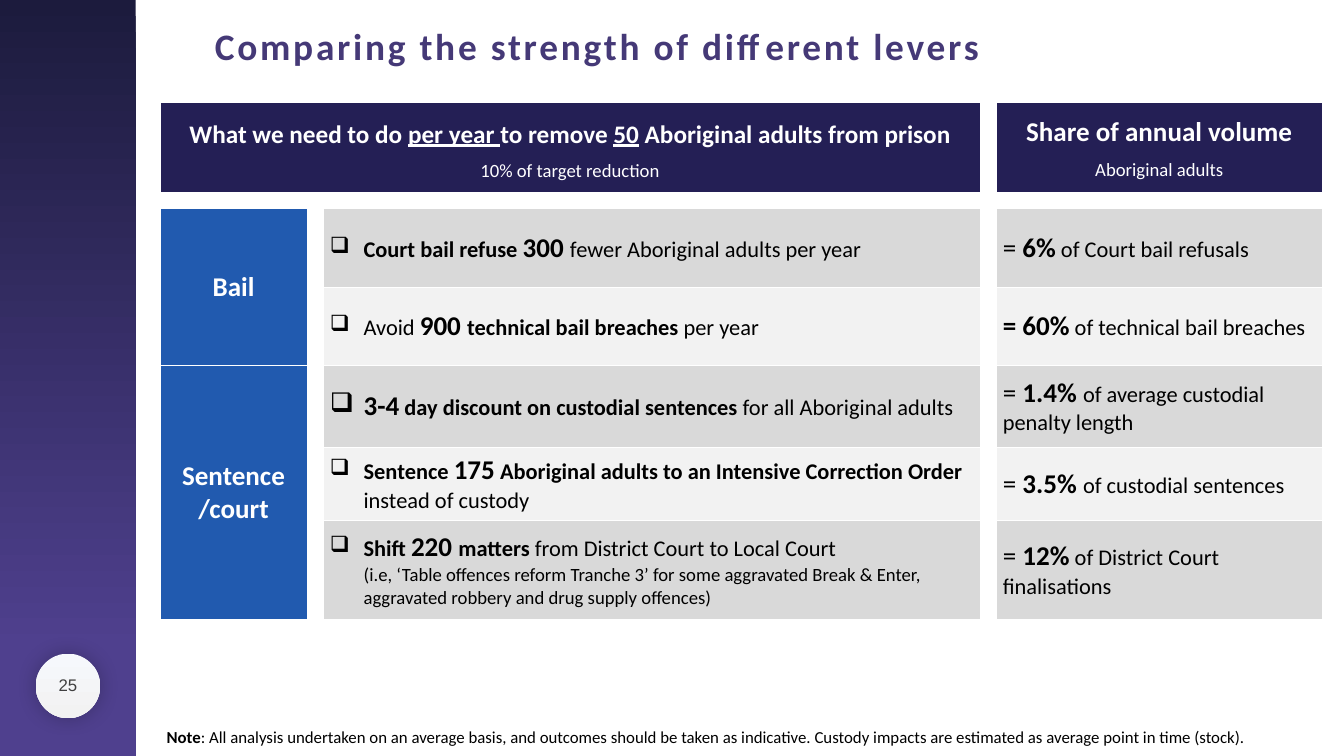
from lxml import etree
from pptx import Presentation
from pptx.dml.color import RGBColor
from pptx.enum.shapes import MSO_SHAPE
from pptx.enum.text import MSO_ANCHOR, PP_ALIGN
from pptx.oxml import parse_xml
from pptx.oxml.ns import nsdecls, qn
from pptx.util import Cm, Pt

RECT, OVAL = MSO_SHAPE.RECTANGLE, MSO_SHAPE.OVAL
TOP, MIDDLE = MSO_ANCHOR.TOP, MSO_ANCHOR.MIDDLE
LEFT, CENTER = PP_ALIGN.LEFT, PP_ALIGN.CENTER

WHITE, BLACK, NAVY, BLUE = "FFFFFF", "000000", "241F55", "215AAF"
BANDS = ["D9D9D9", "F2F2F2"]
BIG, MID, SMALL = 29, 24, 20
INDENT = Cm(1.27)

COLUMNS = [5.56, 0.61, 24.82, 0.61, 12.34]
ROWS = [3.45, 0.58, 2.97, 2.97, 3.07, 2.79, 3.73]
GROUP_COL, LEVER_COL, SHARE_COL = 0, 2, 4
FIRST_ROW = 2

# Each run is (text, size, bold) with an optional underline flag.
LEVER_HEADER = [
    [("What we need to do ", 27, True), ("per year ", 27, True, True), ("to remove ", 27, True),
     ("50", 27, True, True), (" Aboriginal adults from prison", 27, True)],
    [("10% of target reduction", SMALL, False)],
]
SHARE_HEADER = [
    [("Share of annual volume", BIG, True)],
    [("Aboriginal adults", SMALL, False)],
]
GROUPS = [(["Bail"], 2), (["Sentence", "/court"], 3)]
LEVERS = [
    [[("Court bail refuse ", MID, True), ("300 ", BIG, True),
      ("fewer Aboriginal adults per year", MID, False)]],
    [[("Avoid ", MID, False), ("900 ", BIG, True), ("technical bail breaches ", MID, True),
      ("per year", MID, False)]],
    [[("3-4", BIG, True), (" day discount on custodial sentences ", MID, True),
      ("for all Aboriginal adults", MID, False)]],
    [[("Sentence ", MID, True), ("175", BIG, True),
      (" Aboriginal adults to an Intensive Correction Order", MID, True),
      (" instead of custody", MID, False)]],
    [[("Shift ", MID, True), ("220 ", BIG, True), ("matters ", MID, True),
      ("from District Court to Local Court", MID, False)],
     [("(i.e, ‘Table offences reform Tranche 3’ for some aggravated Break & Enter, "
       "aggravated robbery and drug supply offences)", SMALL, False)]],
]
SHARES = [
    [("= ", BIG, False), ("6%", BIG, True), (" of Court bail refusals", MID, False)],
    [("= 60%", BIG, True), (" of technical bail breaches", MID, False)],
    [("= ", BIG, False), ("1.4% ", BIG, True), ("of average custodial penalty length", MID, False)],
    [("= ", BIG, False), ("3.5% ", BIG, True), ("of custodial sentences", MID, False)],
    [("= ", BIG, False), ("12%", BIG, True), (" of District Court finalisations", MID, False)],
]
NOTE = [
    ("Note", 18, True),
    (": All analysis undertaken on an average basis, and outcomes should be taken as indicative. "
     "Custody impacts are estimated as average point in time (stock).", 18, False),
]


def rgb(value):
    """Turn a hex string into a colour."""
    return RGBColor.from_string(value)


def write(tf, paragraphs, color, align=LEFT, font="Calibri"):
    """Write paragraphs of runs into a text frame."""
    tf.word_wrap = True
    for i, runs in enumerate(paragraphs):
        p = tf.paragraphs[0] if i == 0 else tf.add_paragraph()
        p.alignment = align
        for text, size, bold, *underline in runs:
            r = p.add_run()
            r.text = text
            r.font.name, r.font.size, r.font.bold = font, Pt(size), bold
            r.font.color.rgb = rgb(color)
            if underline:
                r.font.underline = True


def add_bullet(p, char):
    """Give a paragraph a hanging indent, with a bullet if there is one."""
    pPr = p._p.get_or_add_pPr()
    pPr.set("marL", str(INDENT))
    if char:
        pPr.set("indent", str(-INDENT))
        etree.SubElement(pPr, qn("a:buChar")).set("char", char)
    else:
        pPr.set("indent", "0")
        etree.SubElement(pPr, qn("a:buNone"))


def add_box(s, kind, left, top, width, height):
    """Add a plain shape without line or shadow."""
    sp = s.shapes.add_shape(kind, Cm(left), Cm(top), Cm(width), Cm(height))
    sp.shadow.inherit = False
    sp.line.fill.background()
    return sp


def fill_gradient(sp, *stops):
    """Fill a shape with a gradient from top to bottom."""
    sp.fill.gradient()
    sp.fill.gradient_angle = 270
    for stop, (position, color) in zip(sp.fill.gradient_stops, stops):
        stop.position = position
        stop.color.rgb = rgb(color)


def add_glow_shadow(sp):
    """Put a soft centred shadow behind a shape."""
    effects = sp._element.spPr.find(qn("a:effectLst"))
    effects.append(parse_xml(
        f'<a:outerShdw {nsdecls("a")} blurRad="{Pt(22)}" dist="0" algn="ctr" rotWithShape="0">'
        '<a:srgbClr val="000000"><a:alpha val="24000"/></a:srgbClr></a:outerShdw>'))


def style_cell(cell, bottom):
    """Give a cell white borders, a white fill and no minimum height."""
    tcPr = cell._tc.get_or_add_tcPr()
    for side, width in (("L", 1), ("R", 1), ("T", 1), ("B", bottom)):
        tcPr.append(parse_xml(
            f'<a:ln{side} {nsdecls("a")} w="{Pt(width)}"><a:solidFill>'
            f'<a:srgbClr val="{WHITE}"/></a:solidFill></a:ln{side}>'))
    cell.fill.solid()
    cell.fill.fore_color.rgb = rgb(WHITE)
    end = etree.SubElement(cell.text_frame.paragraphs[0]._p, qn("a:endParaRPr"))
    end.set("sz", "600")


def fill_cell(cell, paragraphs, fill, color, align=LEFT, anchor=MIDDLE):
    """Colour a cell and write its text."""
    cell.fill.fore_color.rgb = rgb(fill)
    cell.vertical_anchor = anchor
    write(cell.text_frame, paragraphs, color, align)


def add_header(cell, paragraphs, top, gap):
    """Fill a header cell with a heading and a smaller line."""
    fill_cell(cell, paragraphs, NAVY, WHITE, CENTER, TOP)
    cell.margin_top = Cm(top)
    cell.text_frame.paragraphs[1].space_before = Pt(gap)


def add_lever_table(s):
    """Add the table of levers and their share of volume."""
    table = s.shapes.add_table(len(ROWS), len(COLUMNS), Cm(6.05), Cm(3.86),
                               Cm(sum(COLUMNS)), Cm(sum(ROWS))).table
    table.first_row = table.horz_banding = False
    for column, width in zip(table.columns, COLUMNS):
        column.width = Cm(width)
    for i, (row, height) in enumerate(zip(table.rows, ROWS)):
        row.height = Cm(height)
        for cell in row.cells:
            style_cell(cell, 3 if i == 0 else 1)

    table.cell(0, GROUP_COL).merge(table.cell(0, LEVER_COL))
    add_header(table.cell(0, GROUP_COL), LEVER_HEADER, 0.64, 11)
    add_header(table.cell(0, SHARE_COL), SHARE_HEADER, 0.52, 11)

    for gap in (GROUP_COL + 1, LEVER_COL + 1):
        table.cell(FIRST_ROW, gap).merge(table.cell(len(ROWS) - 1, gap))
    top = FIRST_ROW
    for lines, span in GROUPS:
        cell = table.cell(top, GROUP_COL)
        cell.merge(table.cell(top + span - 1, GROUP_COL))
        fill_cell(cell, [[(line, BIG, True)] for line in lines], BLUE, WHITE, CENTER)
        top += span

    for i, (lever, share) in enumerate(zip(LEVERS, SHARES)):
        band = BANDS[i % 2]
        cell = table.cell(FIRST_ROW + i, LEVER_COL)
        fill_cell(cell, lever, band, BLACK)
        for j, p in enumerate(cell.text_frame.paragraphs):
            add_bullet(p, "" if j else "❑")
        fill_cell(table.cell(FIRST_ROW + i, SHARE_COL), [share], band, BLACK)


def add_title(s, text):
    """Place and format the slide title."""
    title = s.shapes.title
    title.left, title.top, title.width, title.height = Cm(6.05), Cm(0.74), Cm(33.07), Cm(1.96)
    tf = title.text_frame
    tf.vertical_anchor = TOP
    write(tf, [[(text, 40, True)]], "453977", CENTER)
    tf.paragraphs[0].runs[0].font._element.set("spc", "300")


def add_page_badge(s, number):
    """Add the round badge with the page number."""
    badge = add_box(s, OVAL, 1.35, 24.71, 2.44, 2.44)
    fill_gradient(badge, (0, "F6F8FC"), (1, "F2F2F2"))
    add_glow_shadow(badge)
    tf = s.shapes.add_textbox(Cm(1.35), Cm(24.89), Cm(2.44), Cm(1.98)).text_frame
    tf.vertical_anchor = MIDDLE
    write(tf, [[(number, 18, False)]], "404040", CENTER, "Arial")


def add_note(s):
    """Add the note at the foot of the slide."""
    sp = add_box(s, RECT, 6.05, 27.36, 43.89, 0.97)
    sp.fill.solid()
    sp.fill.fore_color.rgb = rgb(WHITE)
    sp.text_frame.vertical_anchor = MIDDLE
    write(sp.text_frame, [NOTE], BLACK)


def main():
    """Build the slide and save it."""
    prs = Presentation()
    prs.slide_width, prs.slide_height = Cm(50.8), Cm(28.58)
    s = prs.slides.add_slide(prs.slide_layouts[5])
    fill_gradient(add_box(s, RECT, 0, 0, 5.13, 28.58), (0, "1C1B3D"), (0.86, "4F408E"))
    add_page_badge(s, "25")
    add_lever_table(s)
    add_title(s, "Comparing the strength of different levers")
    add_note(s)
    prs.save("out.pptx")


if __name__ == "__main__":
    main()
